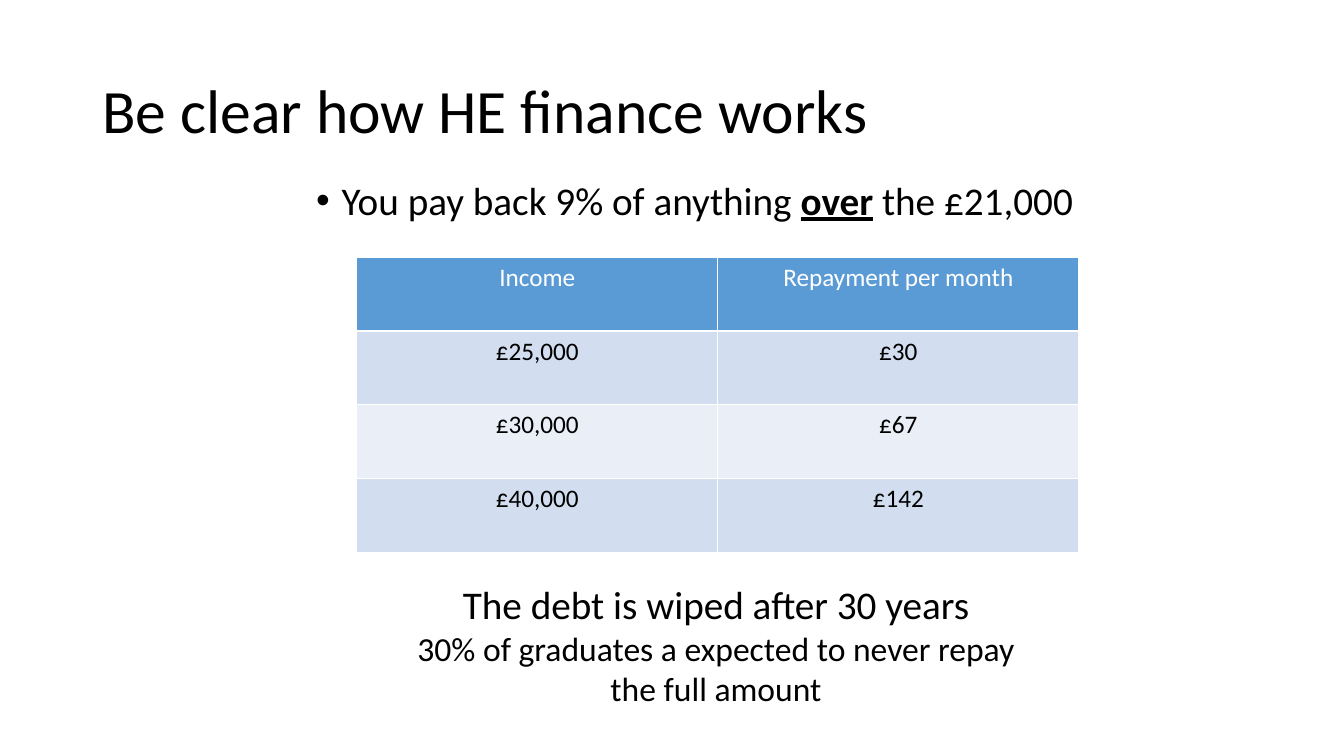
from lxml import etree
from pptx import Presentation
from pptx import util as u
from pptx.dml.color import RGBColor
from pptx.enum import text
from pptx.oxml import ns

BLACK = RGBColor(0x00, 0x00, 0x00)
WHITE = RGBColor(0xFF, 0xFF, 0xFF)
HEADER_BLUE = RGBColor(0x5B, 0x9B, 0xD5)
BANDS = (RGBColor(0xD2, 0xDE, 0xEF), RGBColor(0xEA, 0xEF, 0xF7))
FONT = "Calibri"
CENTER = text.PP_ALIGN.CENTER

REPAYMENTS = (
    ("Income", "Repayment per month"),
    ("£25,000", "£30"),
    ("£30,000", "£67"),
    ("£40,000", "£142"),
)


class FinanceSlide:
    """Holds the style and the current slide, and adds each kind of element."""

    def __init__(self, deck):
        self.slide = deck.slides.add_slide(deck.slide_layouts[5])

    def add_words(self, paragraph, wording, size, color=BLACK, strong=False):
        run = paragraph.add_run()
        run.text = wording
        font = run.font
        font.name, font.size, font.color.rgb = FONT, u.Pt(size), color
        font.bold = font.underline = strong

    def title(self, wording, left, top, width, height):
        heading = self.slide.shapes.title
        heading.left, heading.top = u.Cm(left), u.Cm(top)
        heading.width, heading.height = u.Cm(width), u.Cm(height)
        frame = heading.text_frame
        frame.auto_size = text.MSO_AUTO_SIZE.NONE
        frame.vertical_anchor = text.MSO_ANCHOR.MIDDLE
        paragraph = frame.paragraphs[0]
        paragraph.alignment = text.PP_ALIGN.LEFT
        paragraph.line_spacing = 0.9
        self.add_words(paragraph, wording, 44)

    def text_box(self, left, top, width, height):
        box = self.slide.shapes.add_textbox(
            u.Cm(left), u.Cm(top), u.Cm(width), u.Cm(height))
        box.text_frame.word_wrap = True
        return box.text_frame

    def bullet(self, runs, left, top, width, height):
        paragraph = self.text_box(left, top, width, height).paragraphs[0]
        paragraph.line_spacing = 0.9
        paragraph.space_before = u.Pt(10)
        for wording, strong in runs:
            self.add_words(paragraph, wording, 28, strong=strong)
        properties = paragraph._p.get_or_add_pPr()
        properties.set("marL", str(u.Cm(0.64)))
        properties.set("indent", str(u.Cm(-0.64)))
        etree.SubElement(properties, ns.qn("a:buFont"), typeface="Arial")
        etree.SubElement(properties, ns.qn("a:buChar"), char="•")

    def closing(self, lines, left, top, width, height):
        frame = self.text_box(left, top, width, height)
        for index, (wording, size) in enumerate(lines):
            paragraph = frame.add_paragraph() if index else frame.paragraphs[0]
            paragraph.alignment = CENTER
            self.add_words(paragraph, wording, size)

    def border(self, cell):
        properties = cell._tc.get_or_add_tcPr()
        for side in ("lnL", "lnR", "lnT", "lnB"):
            line = etree.SubElement(properties, ns.qn(f"a:{side}"), w=str(u.Pt(1)))
            fill = etree.SubElement(line, ns.qn("a:solidFill"))
            etree.SubElement(fill, ns.qn("a:srgbClr"), val=str(WHITE))

    def table(self, rows, left, top, width, height):
        grid = self.slide.shapes.add_table(
            len(rows), len(rows[0]),
            u.Cm(left), u.Cm(top), u.Cm(width), u.Cm(height)).table
        for r, row in enumerate(rows):
            for c, wording in enumerate(row):
                cell = grid.cell(r, c)
                self.border(cell)
                cell.fill.solid()
                cell.fill.fore_color.rgb = BANDS[(r - 1) % 2] if r else HEADER_BLUE
                paragraph = cell.text_frame.paragraphs[0]
                paragraph.alignment = CENTER
                self.add_words(paragraph, wording, 18, BLACK if r else WHITE)


def main():
    deck = Presentation()
    deck.slide_width, deck.slide_height = u.Cm(33.87), u.Cm(19.05)
    finance = FinanceSlide(deck)
    finance.title("Be clear how HE finance works", 2.33, 1.01, 29.21, 3.68)
    finance.bullet(
        (("You pay back 9% of anything ", False), ("over", True),
         (" the £21,000", False)),
        7.72, 4.45, 20.62, 12.57)
    finance.table(REPAYMENTS, 8.99, 6.48, 18.2, 7.44)
    finance.closing(
        (("The debt is wiped after 30 years", 28),
         ("30% of graduates a expected to never repay the full amount", 24)),
        9.88, 14.5, 16.33, 3.51)
    deck.save("out.pptx")


if __name__ == "__main__":
    main()
